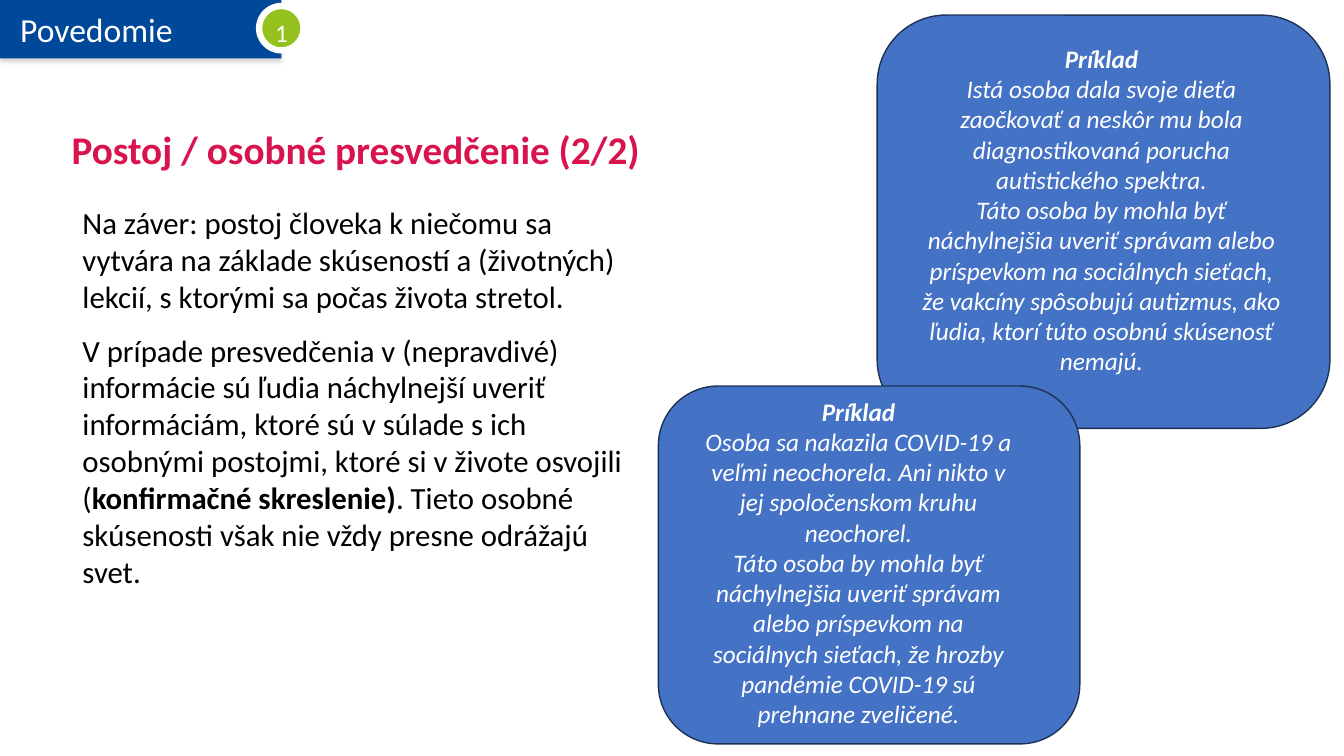
from lxml import etree
from pptx import Presentation
from pptx.dml.color import RGBColor
from pptx.enum import shapes, text
from pptx.oxml import ns
from pptx.util import Inches, Pt

# Content
SECTION, NUMBER = "Povedomie", "1"
TITLE = "Postoj / osobné presvedčenie (2/2)"
BODY = [
    [("Na záver: postoj človeka k niečomu sa vytvára na základe skúseností a "
      "(životných) lekcií, s ktorými sa počas života stretol.", False)],
    [("V prípade presvedčenia v (nepravdivé) informácie sú ľudia náchylnejší "
      "uveriť informáciám, ktoré sú v súlade s ich osobnými postojmi, ktoré si "
      "v živote osvojili (", False),
     ("konfirmačné skreslenie)", True),
     (". Tieto osobné skúsenosti však nie vždy presne odrážajú svet.", False)],
]
EXAMPLES = [
    {"card": (8.7, 0.15, 4.49, 4.1), "label": (9.02, 0.38, 3.81, 4.34), "lines": [
        "Istá osoba dala svoje dieťa zaočkovať a neskôr mu bola diagnostikovaná "
        "porucha autistického spektra.",
        "Táto osoba by mohla byť náchylnejšia uveriť správam alebo príspevkom na "
        "sociálnych sieťach, že vakcíny spôsobujú autizmus, ako ľudia, ktorí túto "
        "osobnú skúsenosť nemajú."]},
    {"card": (6.53, 3.83, 4.18, 3.55), "label": (6.87, 3.88, 3.29, 3.43), "lines": [
        "Osoba sa nakazila COVID-19 a veľmi neochorela. Ani nikto v jej "
        "spoločenskom kruhu neochorel.",
        "Táto osoba by mohla byť náchylnejšia uveriť správam alebo príspevkom na "
        "sociálnych sieťach, že hrozby pandémie COVID-19 sú prehnane zveličené."]},
]
COLORS = {"navy": "004899", "green": "95C11F", "white": "FFFFFF", "black": "000000",
          "pink": "D8134D", "card": "4472C4", "edge": "1E3256", "shadow": "808080"}


def color(name):
    return RGBColor.from_string(COLORS[name])


def add_shape(kind, box, fill, line=None, width=1):
    sp = s.shapes.add_shape(kind, *map(Inches, box))
    sp.shadow.inherit = False
    sp.fill.solid()
    sp.fill.fore_color.rgb = color(fill)
    if line:
        sp.line.color.rgb = color(line)
        sp.line.width = Pt(width)
    else:
        sp.line.fill.background()
    return sp


def write(sp, paragraphs, size, ink, italic=False, **fmt):
    tf = sp.text_frame
    tf.word_wrap = True
    for i, runs in enumerate(paragraphs):
        p = tf.add_paragraph() if i else tf.paragraphs[0]
        for name, value in fmt.items():
            setattr(p, name, value)
        if i == 0:
            p.space_before = Pt(0)
        for words, bold in runs:
            r = p.add_run()
            r.text = words
            font = {"name": "Calibri", "size": Pt(size), "bold": bold, "italic": italic}
            for name, value in font.items():
                setattr(r.font, name, value)
            r.font.color.rgb = color(ink)
    return tf


def add_text(box, *args, **fmt):
    return write(s.shapes.add_textbox(*map(Inches, box)), *args, **fmt)


prs = Presentation()
prs.slide_width, prs.slide_height = Inches(13.33), Inches(7.5)
s = prs.slides.add_slide(prs.slide_layouts[5])

# Section banner with a soft shadow
banner = add_shape(shapes.MSO_SHAPE.RECTANGLE, (0, 0, 2.79, 0.58), "navy")
tf = write(banner, [[(SECTION, False)]], 24, "white", alignment=text.PP_ALIGN.LEFT)
tf.margin_left = Inches(0.2)
tf.vertical_anchor = text.MSO_ANCHOR.MIDDLE
effects = banner._element.spPr.find(ns.qn("a:effectLst"))
shadow = etree.SubElement(effects, ns.qn("a:outerShdw"), blurRad=str(Pt(3.1)),
                          dist=str(Pt(1.8)), dir="5400000", rotWithShape="0")
tint = etree.SubElement(shadow, ns.qn("a:srgbClr"), val=COLORS["shadow"])
etree.SubElement(tint, ns.qn("a:alpha"), val="35000")

# Section number
add_shape(shapes.MSO_SHAPE.OVAL, (2.57, 0.06, 0.44, 0.44), "green", "white", 4.5)
add_text((2.63, -0.03, 0.35, 0.51), [[(NUMBER, False)]], 18, "white", line_spacing=1.5)

# Title
title = s.shapes.title
title.left, title.top, title.width, title.height = map(Inches, (0.61, 1.18, 12.46, 0.66))
tf = write(title, [[(TITLE, True)]], 28, "pink",
           alignment=text.PP_ALIGN.LEFT, line_spacing=0.9)
tf.vertical_anchor = text.MSO_ANCHOR.MIDDLE
tf.auto_size = text.MSO_AUTO_SIZE.NONE

# Body
add_text((0.72, 1.97, 5.7, 5.35), BODY, 22, "black",
         space_before=Pt(6), space_after=Pt(6))

# Example cards
for example in EXAMPLES:
    add_shape(shapes.MSO_SHAPE.ROUNDED_RECTANGLE, example["card"], "card", "edge")
    lines = [[("Príklad", True)]] + [[(line, False)] for line in example["lines"]]
    add_text(example["label"], lines, 18, "white", italic=True,
             alignment=text.PP_ALIGN.CENTER)

prs.save("out.pptx")
